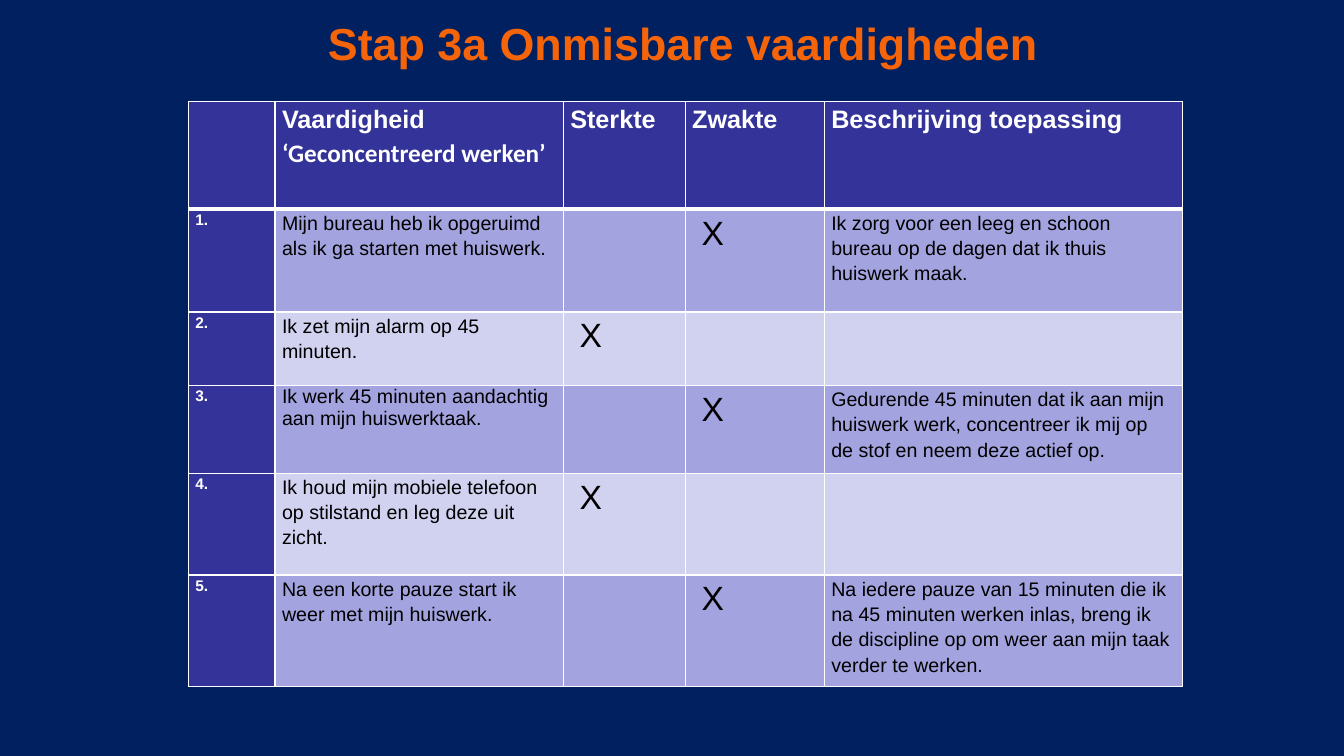
from lxml.etree import SubElement
from pptx import Presentation
from pptx.dml.color import RGBColor
from pptx.enum.text import MSO_ANCHOR as Anchor, PP_ALIGN as Align
from pptx.oxml.ns import qn
from pptx.util import Pt

COLORS = {
    "background": "002060",
    "title": "F6640A",
    "header": "333399",
    "odd": "A3A3E0",
    "even": "D1D1F0",
    "light": "FFFFFF",
    "dark": "000000",
}
COLUMN_WIDTHS = [61.9, 205.9, 87.1, 99.4, 255.6]
ROW_HEIGHTS = [77, 73.5, 52.5, 62.7, 72.7, 79.9]
HEADINGS = ["", "Vaardigheid\n‘Geconcentreerd werken’", "Sterkte", "Zwakte",
            "Beschrijving toepassing"]
# Skill, whether it is a strength, how it is applied
SKILLS = [
    ("Mijn bureau heb ik opgeruimd als ik ga starten met huiswerk.", False,
     "Ik zorg voor een leeg en schoon bureau op de dagen dat ik thuis huiswerk maak."),
    ("Ik zet mijn alarm op 45 minuten.", True, ""),
    ("Ik werk 45 minuten aandachtig aan mijn huiswerktaak.", False,
     "Gedurende 45 minuten dat ik aan mijn huiswerk werk, concentreer ik mij op "
     "de stof en neem deze actief op."),
    ("Ik houd mijn mobiele telefoon op stilstand en leg deze uit zicht.", True, ""),
    ("Na een korte pauze start ik weer met mijn huiswerk.", False,
     "Na iedere pauze van 15 minuten die ik na 45 minuten werken inlas, breng ik "
     "de discipline op om weer aan mijn taak verder te werken."),
]
CELL_INSET = 5
MARK_INDENT = 6.7


def rgb(name):
    return RGBColor.from_string(COLORS[name])


def style_text(paragraph, size, color, bold, font="Arial"):
    for run in paragraph.runs:
        run.font.name = font
        run.font.size = Pt(size)
        run.font.bold = bold
        run.font.color.rgb = rgb(color)


def add_title(slide, left, top, width, height):
    title = slide.shapes.add_textbox(Pt(left), Pt(top), Pt(width), Pt(height))
    frame = title.text_frame
    frame.word_wrap = True
    frame.vertical_anchor = Anchor.MIDDLE
    frame.text = "Stap 3a Onmisbare vaardigheden"
    frame.paragraphs[0].alignment = Align.CENTER
    style_text(frame.paragraphs[0], 32, "title", True)


def add_borders(cell, row):
    thick_side = {0: "lnB", 1: "lnT"}.get(row)
    properties = cell._tc.get_or_add_tcPr()
    for side in ("lnL", "lnR", "lnT", "lnB"):
        width = 3 if side == thick_side else 1
        line = SubElement(properties, qn(f"a:{side}"), w=str(Pt(width)))
        fill = SubElement(line, qn("a:solidFill"))
        SubElement(fill, qn("a:srgbClr"), val=COLORS["light"])


def fill_cell(cell, row, text, fill, size, color, bold):
    add_borders(cell, row)
    cell.fill.solid()
    cell.fill.fore_color.rgb = rgb(fill)
    cell.margin_left = Pt(CELL_INSET + (MARK_INDENT if text == "X" else 0))
    cell.margin_right = Pt(CELL_INSET)
    cell.margin_top = cell.margin_bottom = 0
    cell.text_frame.text = text
    for paragraph in cell.text_frame.paragraphs:
        paragraph.line_spacing = 1.15
        style_text(paragraph, size, color, bold)


def add_skills_table(slide, left, top):
    table = slide.shapes.add_table(
        len(ROW_HEIGHTS), len(COLUMN_WIDTHS), Pt(left), Pt(top),
        Pt(sum(COLUMN_WIDTHS)), Pt(sum(ROW_HEIGHTS))).table
    for column, width in zip(table.columns, COLUMN_WIDTHS):
        column.width = Pt(width)
    for table_row, height in zip(table.rows, ROW_HEIGHTS):
        table_row.height = Pt(height)

    # Header row
    for column, heading in enumerate(HEADINGS):
        fill_cell(table.cell(0, column), 0, heading, "header", 18, "light", True)
    skill_name = table.cell(0, 1).text_frame.paragraphs[1]
    style_text(skill_name, 18, "light", True, "Calibri")

    # Numbered skills
    for row, (skill, is_strength, usage) in enumerate(SKILLS, start=1):
        band = "odd" if row % 2 else "even"
        marks = ("X", "") if is_strength else ("", "X")
        fill_cell(table.cell(row, 0), row, f"{row}.", "header", 11, "light", True)
        for column, text in enumerate((skill, *marks, usage), start=1):
            size = 24 if text == "X" else 14
            fill_cell(table.cell(row, column), row, text, band, size, "dark", False)
    table.cell(3, 1).text_frame.paragraphs[0].line_spacing = 1.0


def main():
    deck = Presentation()
    deck.slide_width, deck.slide_height = Pt(960), Pt(540)
    slide = deck.slides.add_slide(deck.slide_layouts[6])
    slide.background.fill.solid()
    slide.background.fill.fore_color.rgb = rgb("background")
    add_title(slide, 164, 10, 648, 40.5)
    add_skills_table(slide, 134.6, 72.4)
    deck.save("out.pptx")


if __name__ == "__main__":
    main()
